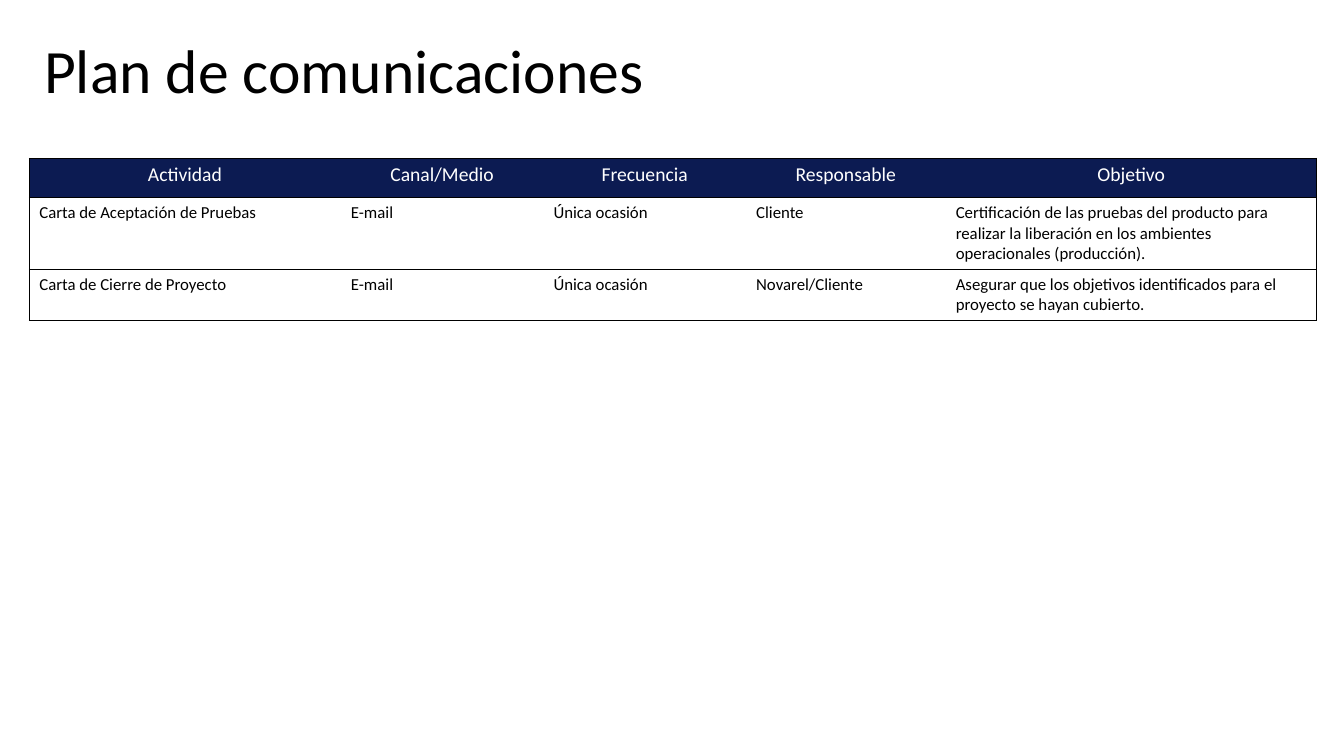
from lxml.etree import SubElement
from pptx import Presentation
from pptx.dml.color import RGBColor
from pptx.enum.text import MSO_ANCHOR, PP_ALIGN
from pptx.oxml.ns import qn
from pptx.util import Inches, Pt

COLUMN_WIDTHS = [3.09, 2.01, 2.01, 1.98, 3.68]
ROW_HEIGHTS = [0.39, 0.71, 0.51]
COMMUNICATIONS = [
    ["Actividad", "Canal/Medio", "Frecuencia", "Responsable", "Objetivo"],
    ["Carta de Aceptación de Pruebas", "E-mail", "Única ocasión", "Cliente",
     "Certificación de las pruebas del producto para realizar la liberación "
     "en los ambientes operacionales (producción)."],
    ["Carta de Cierre de Proyecto", "E-mail", "Única ocasión", "Novarel/Cliente",
     "Asegurar que los objetivos identificados para el proyecto se hayan cubierto."],
]


def color(value):
    return RGBColor.from_string(value)


class SlideBuilder:
    font_name = "Calibri"
    black = "000000"
    white = "FFFFFF"
    navy = "0C1B52"

    def __init__(self, slide):
        self.slide = slide

    def set_font(self, paragraph, size, font_color):
        paragraph.font.name = self.font_name
        paragraph.font.size = Pt(size)
        paragraph.font.color.rgb = color(font_color)

    def add_title(self, text, left, top, width, height):
        shape = self.slide.shapes.add_textbox(
            Inches(left), Inches(top), Inches(width), Inches(height))
        frame = shape.text_frame
        frame.word_wrap = True
        frame.vertical_anchor = MSO_ANCHOR.MIDDLE
        paragraph = frame.paragraphs[0]
        paragraph.text = text
        paragraph.line_spacing = 0.9
        self.set_font(paragraph, 44, self.black)

    def set_borders(self, cell, visible_sides):
        """Draw the named sides (L, R, T, B) and clear the others."""
        properties = cell._tc.get_or_add_tcPr()
        for side in "LRTB":
            line = SubElement(properties, qn(f"a:ln{side}"), w=str(Pt(0.5)))
            if side in visible_sides:
                fill = SubElement(line, qn("a:solidFill"))
                SubElement(fill, qn("a:srgbClr"), val=self.black)
            else:
                SubElement(line, qn("a:noFill"))

    def add_table(self, rows, left, top, column_widths, row_heights):
        table = self.slide.shapes.add_table(
            len(rows), len(column_widths), Inches(left), Inches(top),
            Inches(sum(column_widths)), Inches(sum(row_heights))).table
        table.horz_banding = False
        for column, width in zip(table.columns, column_widths):
            column.width = Inches(width)
        for row, height in zip(table.rows, row_heights):
            row.height = Inches(height)
        last_column = len(column_widths) - 1
        for row_index, texts in enumerate(rows):
            for column_index, text in enumerate(texts):
                cell = table.cell(row_index, column_index)
                sides = "TB"
                if column_index == 0:
                    sides += "L"
                if column_index == last_column:
                    sides += "R"
                self.set_borders(cell, sides)
                self.fill_cell(cell, text, row_index == 0)

    def fill_cell(self, cell, text, is_header):
        paragraph = cell.text_frame.paragraphs[0]
        paragraph.text = text
        if is_header:
            cell.fill.solid()
            cell.fill.fore_color.rgb = color(self.navy)
            paragraph.alignment = PP_ALIGN.CENTER
            self.set_font(paragraph, 14, self.white)
        else:
            cell.fill.background()
            self.set_font(paragraph, 12, self.black)


def main():
    presentation = Presentation()
    presentation.slide_width = Inches(13.33)
    presentation.slide_height = Inches(7.5)
    slide = presentation.slides.add_slide(presentation.slide_layouts[6])
    builder = SlideBuilder(slide)
    builder.add_title("Plan de comunicaciones", 0.34, 0, 11.5, 1.45)
    builder.add_table(COMMUNICATIONS, 0.29, 1.57, COLUMN_WIDTHS, ROW_HEIGHTS)
    presentation.save("out.pptx")


if __name__ == "__main__":
    main()
